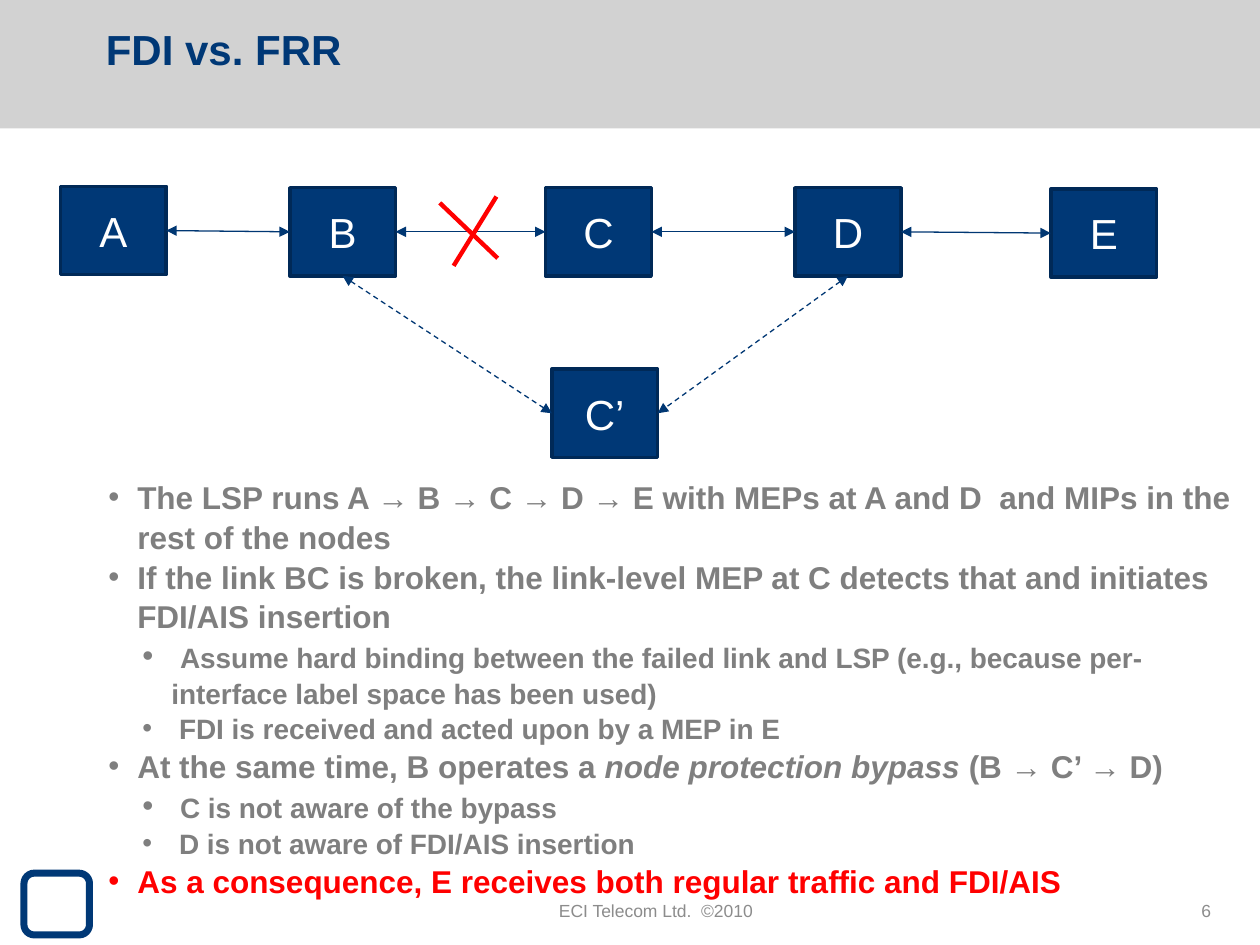
from lxml import etree
from pptx import Presentation
from pptx.dml.color import RGBColor
from pptx.enum.dml import MSO_LINE
from pptx.enum.shapes import MSO_CONNECTOR, MSO_SHAPE
from pptx.enum.text import MSO_ANCHOR, MSO_AUTO_SIZE, PP_ALIGN
from pptx.oxml.ns import qn
from pptx.util import Inches, Pt

STRAIGHT, DASH = MSO_CONNECTOR.STRAIGHT, MSO_LINE.DASH
RECT, ROUND_RECT = MSO_SHAPE.RECTANGLE, MSO_SHAPE.ROUNDED_RECTANGLE
LEFT, CENTER, RIGHT = PP_ALIGN.LEFT, PP_ALIGN.CENTER, PP_ALIGN.RIGHT
TOP, MIDDLE = MSO_ANCHOR.TOP, MSO_ANCHOR.MIDDLE
BOTTOM_SIDE, LEFT_SIDE, RIGHT_SIDE = 2, 1, 3

NAVY, EDGE, LINK, RED = "003876", "002957", "003773", "FF0000"
BAND, GREY, FOOTER = "D2D2D2", "7F7F7F", "8C8C8C"
NODE_W, NODE_H = 0.84, 0.7
HANG = 0.23


def rgb(value):
    return RGBColor.from_string(value)


class SlideBuilder:
    """Holds the text style and the current slide."""

    font = "Arial"

    def __init__(self, slide):
        self.slide = slide
        self.shapes = slide.shapes

    def run(self, p, text, color, **fmt):
        r = p.add_run()
        r.text = text
        r.font.color.rgb = rgb(color)
        for name, value in {"name": self.font, **fmt}.items():
            setattr(r.font, name, value)

    def frame(self, sp, anchor):
        tf = sp.text_frame
        settings = {"word_wrap": True, "auto_size": MSO_AUTO_SIZE.NONE,
                    "vertical_anchor": anchor}
        for name, value in settings.items():
            setattr(tf, name, value)
        return tf

    def place(self, sp, *box):
        for name, value in zip(("left", "top", "width", "height"), box):
            setattr(sp, name, Inches(value))

    def shape(self, kind, box, fill=None, line=None, width=2):
        sp = self.shapes.add_shape(kind, *map(Inches, box))
        sp.shadow.inherit = False
        if fill:
            sp.fill.solid()
            sp.fill.fore_color.rgb = rgb(fill)
        else:
            sp.fill.background()
        if line:
            sp.line.color.rgb = rgb(line)
            sp.line.width = Pt(width)
        else:
            sp.line.fill.background()
        return sp

    def band(self, *box):
        sp = self.shape(RECT, box, fill=BAND)
        self.shapes._spTree.insert(2, sp._element)  # behind the title

    def title(self, text, *box):
        sp = self.shapes.title
        self.place(sp, *box)
        p = self.frame(sp, MIDDLE).paragraphs[0]
        p.alignment = LEFT
        self.run(p, text, NAVY, size=Pt(24), bold=True)

    def node(self, label, left, top):
        sp = self.shape(RECT, (left, top, NODE_W, NODE_H), NAVY, EDGE)
        p = self.frame(sp, MIDDLE).paragraphs[0]
        p.alignment = CENTER
        self.run(p, label, "FFFFFF", size=Pt(24))
        return sp

    def line(self, start, end, color, width):
        cx = self.shapes.add_connector(STRAIGHT, *map(Inches, start + end))
        cx.line.color.rgb = rgb(color)
        cx.line.width = Pt(width)
        etree.SubElement(cx._element.spPr, qn("a:effectLst"))
        return cx

    def link(self, a, a_side, b, b_side, dash=None):
        cx = self.line((0, 0), (1, 1), LINK, 0.75)
        cx.begin_connect(a, a_side)
        cx.end_connect(b, b_side)
        if dash:
            cx.line.dash_style = dash
        ln = cx.line._get_or_add_ln()
        for tag in ("a:headEnd", "a:tailEnd"):
            etree.SubElement(ln, qn(tag), type="triangle")

    def bullets(self, items, *box):
        sp = self.slide.placeholders[1]
        self.place(sp, *box)
        tf = self.frame(sp, TOP)
        for i, (level, color, runs) in enumerate(items):
            p = tf.add_paragraph() if i else tf.paragraphs[0]
            p.level = level
            p.line_spacing, p.space_before = 1.05, Pt(0)
            pPr = p._p.get_or_add_pPr()
            pPr.set("marL", str(Inches(0.5 if level else HANG)))
            pPr.set("indent", str(-Inches(HANG)))
            etree.SubElement(pPr, qn("a:buChar"), char="•")
            for text, size, italic in runs:
                self.run(p, text, color, size=Pt(size), bold=True, italic=italic)

    def label(self, text, align, *box):
        sp = self.shapes.add_textbox(*map(Inches, box))
        p = self.frame(sp, MIDDLE).paragraphs[0]
        p.alignment = align
        self.run(p, text, FOOTER, size=Pt(10))


ITEMS = [
    (0, GREY, [("The LSP runs A → B → C → D → E with MEPs at A and D\u00a0 and MIPs "
                "in the rest of the nodes", 18, False)]),
    (0, GREY, [("If the link BC is broken, the link-level MEP at C detects that and "
                "initiates FDI/AIS insertion", 18, False)]),
    (1, GREY, [(" ", 18, False),
               ("Assume hard binding between the failed link and LSP (e.g., because "
                "per-interface label space has been used)", 16, False)]),
    (1, GREY, [(" FDI is received and acted upon by a MEP in E", 16, False)]),
    (0, GREY, [("At the same time, B operates a ", 18, False),
               ("node protection bypass ", 18, True),
               ("(B → C’ → D)", 18, False)]),
    (1, GREY, [(" ", 18, False), ("C is not aware of the bypass", 16, False)]),
    (1, GREY, [(" D is not aware of FDI/AIS insertion", 16, False)]),
    (0, RED, [("As a consequence, E receives both regular traffic and FDI/AIS",
               18, False)]),
]
NODES = {"A": (0.48, 1.48), "B": (2.3, 1.49), "C": (4.33, 1.49),
         "D": (6.31, 1.49), "E": (8.34, 1.5), "C’": (4.38, 2.93)}


def main():
    prs = Presentation()
    prs.slide_width, prs.slide_height = Inches(10), Inches(7.5)
    s = SlideBuilder(prs.slides.add_slide(prs.slide_layouts[1]))

    # Header and footer
    s.band(0, 0, 10, 1.02)
    s.title("FDI vs. FRR", 0.74, 0.08, 8.35, 0.61)
    s.shape(ROUND_RECT, (0.19, 6.93, 0.52, 0.49), line=NAVY, width=4)
    s.label("6", RIGHT, 7.38, 7.03, 2.33, 0.4)
    s.label("ECI Telecom Ltd.  ©2010", CENTER, 3.62, 7.03, 3.17, 0.4)

    # Network nodes
    nodes = {name: s.node(name, *pos) for name, pos in NODES.items()}

    # Working path
    for a, b in zip("ABCD", "BCDE"):
        s.link(nodes[a], RIGHT_SIDE, nodes[b], LEFT_SIDE)

    # Bypass through C’
    for name, side in (("B", LEFT_SIDE), ("D", RIGHT_SIDE)):
        s.link(nodes[name], BOTTOM_SIDE, nodes["C’"], side, DASH)

    # Cross on the broken link BC
    s.line((3.94, 1.56), (3.6, 2.11), RED, 2.5)
    s.line((3.49, 1.61), (3.95, 2.05), RED, 2.5)

    # Explanation
    s.bullets(ITEMS, 0.76, 3.73, 9.24, 3.33)
    prs.save("out.pptx")


if __name__ == "__main__":
    main()
